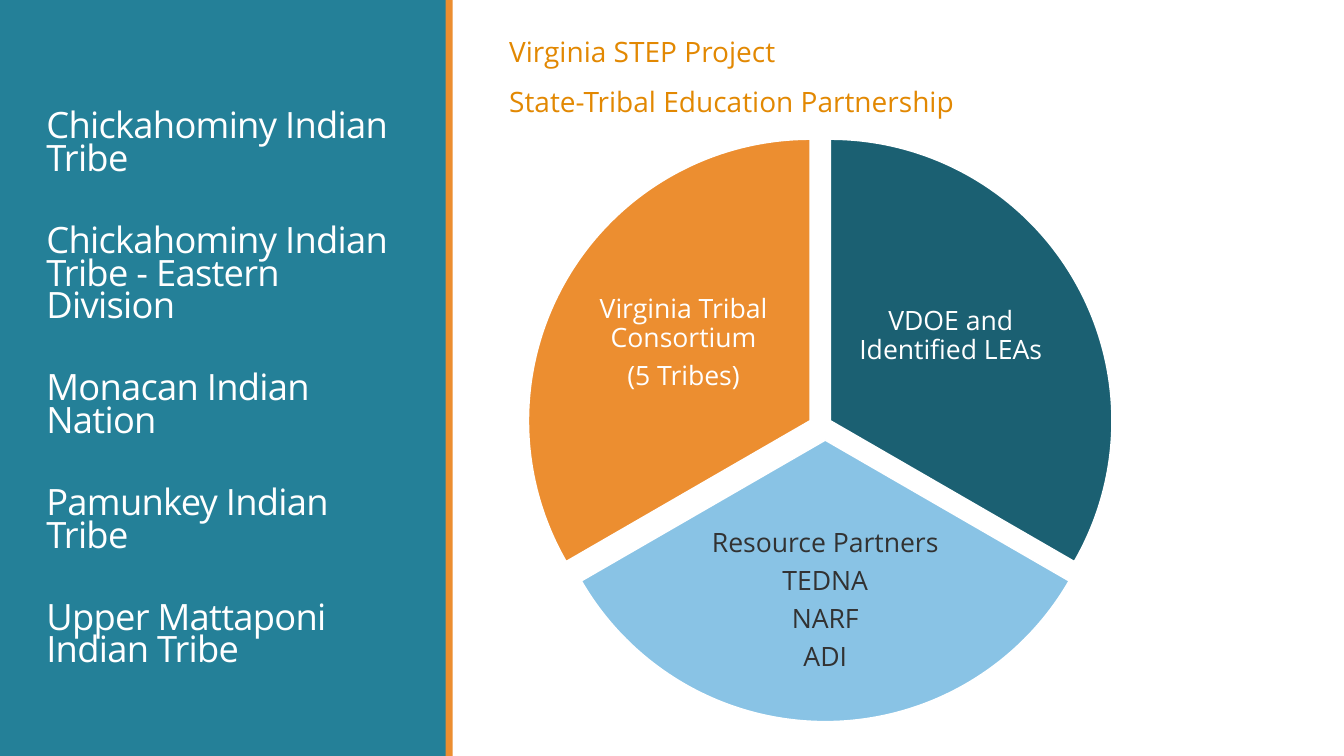
from dataclasses import dataclass

from pptx import Presentation
from pptx.dml.color import RGBColor
from pptx.enum.shapes import MSO_SHAPE
from pptx.enum.text import MSO_ANCHOR, MSO_AUTO_SIZE, PP_ALIGN
from pptx.oxml.ns import qn
from pptx.shapes.autoshape import Shape
from pptx.slide import Slide
from pptx.text.text import TextFrame
from pptx.util import Inches, Pt

FONT = "Open Sans"
COLORS = {
    "panel": "248098",
    "orange": "EC8E30",
    "heading": "E28802",
    "teal": "1B6072",
    "sky": "89C3E5",
    "white": "FFFFFF",
    "dark": "323232",
}
TRIBES = [
    "Chickahominy Indian Tribe",
    "Chickahominy Indian Tribe - Eastern Division",
    "Monacan Indian Nation",
    "Pamunkey Indian Tribe",
    "Upper Mattaponi Indian Tribe",
]
HEADING = ["Virginia STEP Project", "State-Tribal Education Partnership"]
PIE_SIZE = 5.59
ADJUSTMENT_PER_DEGREE = 0.6

Box = tuple[float, float, float, float]


@dataclass(frozen=True)
class TextStyle:
    size: float
    color: str
    line_spacing: float
    before: float = 0
    after: float = 0
    align: PP_ALIGN = PP_ALIGN.LEFT
    tracking: float = 0


@dataclass(frozen=True)
class Slice:
    left: float
    top: float
    start: int
    end: int
    fill: str
    label_box: Box
    lines: tuple[str, ...]
    text_color: str = "white"


SLICES = [
    Slice(5.44, 1.38, 270, 30, "teal", (8.48, 2.41, 1.9, 1.86),
          ("VDOE and Identified LEAs",)),
    Slice(5.39, 1.57, 30, 150, "sky", (6.92, 5.1, 2.53, 1.73),
          ("Resource Partners", "TEDNA", "NARF", "ADI"), "dark"),
    Slice(5.24, 1.38, 150, 270, "orange", (5.83, 2.48, 1.9, 1.86),
          ("Virginia Tribal Consortium", "(5 Tribes)")),
]


def rgb(name: str) -> RGBColor:
    return RGBColor.from_string(COLORS[name])


def place(shape: Shape, box: Box) -> None:
    shape.left, shape.top, shape.width, shape.height = map(Inches, box)


def write(frame: TextFrame, lines: list[str] | tuple[str, ...],
          style: TextStyle, anchor: MSO_ANCHOR) -> None:
    frame.word_wrap = True
    frame.auto_size = MSO_AUTO_SIZE.NONE
    frame.vertical_anchor = anchor
    for index, line in enumerate(lines):
        paragraph = frame.add_paragraph() if index else frame.paragraphs[0]
        paragraph.alignment = style.align
        paragraph.line_spacing = style.line_spacing
        paragraph.space_before = Pt(style.before)
        paragraph.space_after = Pt(style.after)
        run = paragraph.add_run()
        run.text = line
        run.font.name = FONT
        run.font.size = Pt(style.size)
        run.font.color.rgb = rgb(style.color)
        if style.tracking:
            run.font._element.set("spc", str(round(style.tracking * 100)))


def set_insets(frame: TextFrame, horizontal: float, vertical: float) -> None:
    frame.margin_left = frame.margin_right = Inches(horizontal)
    frame.margin_top = frame.margin_bottom = Inches(vertical)


def add_filled(slide: Slide, kind: MSO_SHAPE, box: Box, fill: str) -> Shape:
    shape = slide.shapes.add_shape(kind, *map(Inches, box))
    shape.shadow.inherit = False
    shape.fill.solid()
    shape.fill.fore_color.rgb = rgb(fill)
    shape.line.fill.background()
    return shape


def add_side_panel(slide: Slide) -> None:
    """Put the panel and its edge stripe behind the placeholders."""
    panel = add_filled(slide, MSO_SHAPE.RECTANGLE, (0, 0, 4.43, 7.5), "panel")
    stripe = add_filled(slide, MSO_SHAPE.RECTANGLE, (4.42, 0, 0.07, 7.5), "orange")
    for position, part in enumerate((panel, stripe), start=2):
        slide.shapes.element.insert(position, part.element)


def fill_tribes(slide: Slide) -> None:
    tribes = slide.shapes.title
    place(tribes, (0.36, 1.03, 3.63, 5.66))
    style = TextStyle(25.9, "white", 0.75, after=35.2, tracking=-0.5)
    write(tribes.text_frame, TRIBES, style, MSO_ANCHOR.BOTTOM)
    tribes.text_frame.paragraphs[-1].space_after = Pt(6)


def fill_heading(slide: Slide) -> None:
    heading = slide.placeholders[1]
    place(heading, (4.95, 0.33, 7.1, 1.01))
    frame = heading.text_frame
    set_insets(frame, 0, 0.05)
    write(frame, HEADING, TextStyle(20, "heading", 0.9, 12, 2), MSO_ANCHOR.TOP)
    for paragraph in frame.paragraphs:
        properties = paragraph._p.get_or_add_pPr()
        properties.set("marL", str(Inches(0.1)))
        properties.set("indent", "0")
        properties.append(properties.makeelement(qn("a:buNone"), {}))


def add_slice(slide: Slide, part: Slice) -> None:
    wedge = add_filled(slide, MSO_SHAPE.PIE,
                       (part.left, part.top, PIE_SIZE, PIE_SIZE), part.fill)
    for index, degrees in enumerate((part.start, part.end)):
        wedge.adjustments[index] = degrees * ADJUSTMENT_PER_DEGREE
    wedge.line.color.rgb = rgb("white")
    wedge.line.width = Pt(1.25)

    label = slide.shapes.add_textbox(*map(Inches, part.label_box))
    set_insets(label.text_frame, 0.03, 0.03)
    style = TextStyle(19, part.text_color, 0.9, after=6.65, align=PP_ALIGN.CENTER)
    write(label.text_frame, part.lines, style, MSO_ANCHOR.MIDDLE)


def main() -> None:
    presentation = Presentation()
    presentation.slide_width = Inches(13.33)
    presentation.slide_height = Inches(7.5)
    slide = presentation.slides.add_slide(presentation.slide_layouts[1])
    add_side_panel(slide)
    fill_tribes(slide)
    fill_heading(slide)
    for part in SLICES:
        add_slice(slide, part)
    presentation.save("out.pptx")


if __name__ == "__main__":
    main()
